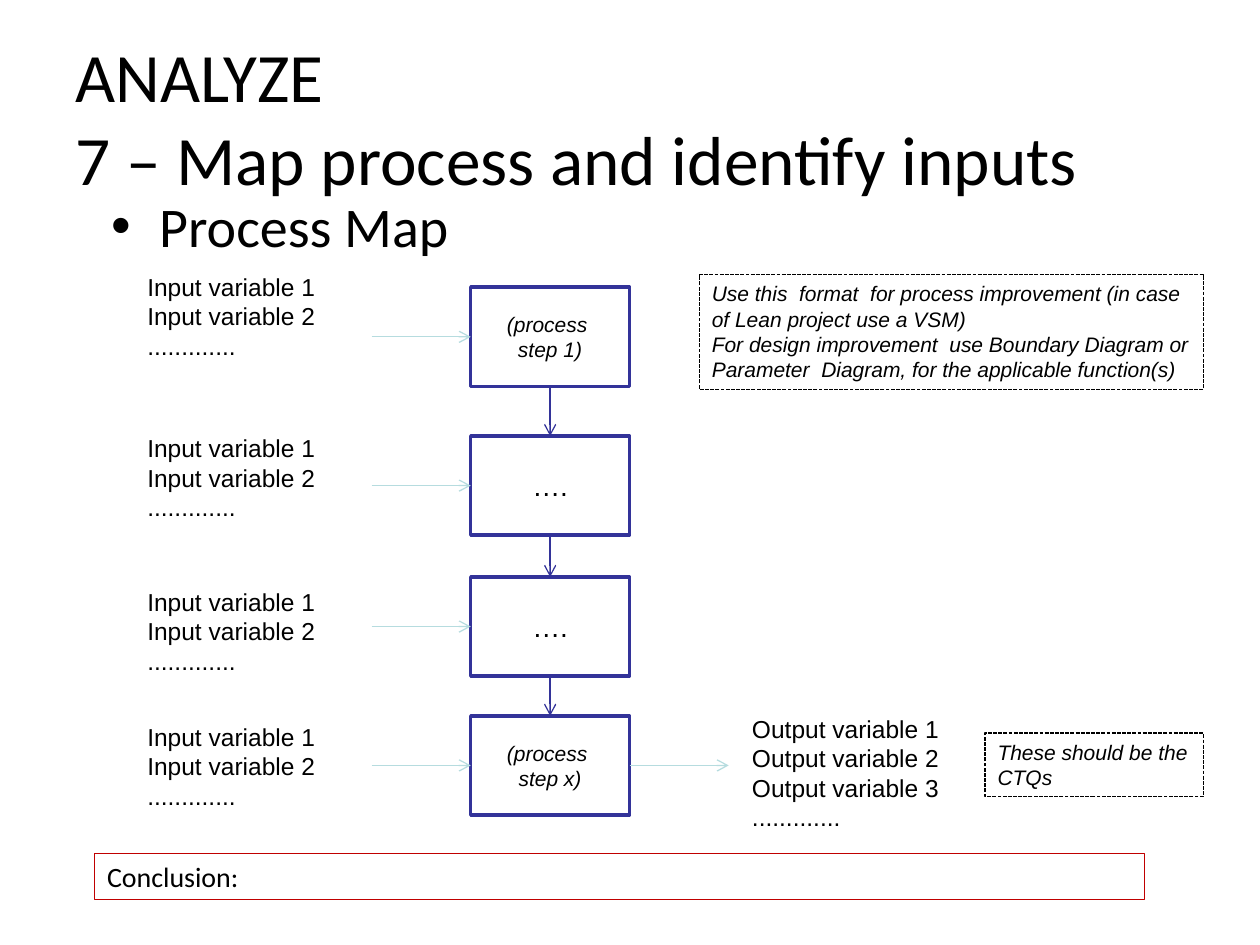
from pptx import Presentation
from pptx.dml.color import RGBColor
from pptx.enum import dml, shapes, text
from pptx.oxml.ns import qn
from pptx.util import Cm, Pt
from lxml import etree

INK = {"text": "000000", "step": "333399", "flow": "B6DCDF", "end": "C00000"}
ALIGN = text.PP_ALIGN
ANCHOR = text.MSO_ANCHOR
SHAPE = shapes.MSO_SHAPE

STEP_X, STEP_W, STEP_H = 9.49, 3.2, 2
# step text, font size, italic, top of step, top of its inputs
STEPS = [
    ("(process \nstep 1)", 12, True, 5.79, 5.36),
    ("….", 16, False, 8.79, 8.61),
    ("….", 16, False, 11.63, 11.71),
    ("(process \nstep x)", 12, True, 14.43, 14.43),
]
INPUTS = "Input variable 1\nInput variable 2\n............."
OUTPUTS = "Output variable 1\nOutput variable 2\nOutput variable 3\n............."
NOTE = ("Use this  format  for process improvement (in case of Lean project use a VSM)\n"
        "For design improvement  use Boundary Diagram or Parameter  Diagram, "
        "for the applicable function(s)")


def color(name):
    return RGBColor.from_string(INK[name])


def place(shape, left, top, width, height):
    shape.left, shape.top = Cm(left), Cm(top)
    shape.width, shape.height = Cm(width), Cm(height)


def write(shape, words, size=14, font="Arial", italic=False,
          align=ALIGN.LEFT, anchor=ANCHOR.TOP):
    frame = shape.text_frame
    frame.word_wrap = True
    frame.auto_size = text.MSO_AUTO_SIZE.NONE
    frame.vertical_anchor = anchor
    frame.text = words
    for para in frame.paragraphs:
        para.alignment = align
        for run in para.runs:
            run.font.size = Pt(size)
            run.font.name = font
            run.font.italic = italic
            run.font.color.rgb = color("text")


def label(slide, words, *box, **style):
    shape = slide.shapes.add_textbox(*map(Cm, box))
    write(shape, words, **style)
    return shape


def frame(slide, words, *box, kind=SHAPE.RECTANGLE, line="text",
          width=0.75, dash=None, **style):
    """Draw an outlined, unfilled shape with text."""
    shape = slide.shapes.add_shape(kind, *map(Cm, box))
    shape.shadow.inherit = False
    shape.fill.background()
    shape.line.color.rgb = color(line)
    shape.line.width = Pt(width)
    if dash:
        shape.line.dash_style = dash
    write(shape, words, **style)


def arrow(slide, x1, y1, x2, y2, line):
    link = slide.shapes.add_connector(
        shapes.MSO_CONNECTOR.STRAIGHT, Cm(x1), Cm(y1), Cm(x2), Cm(y2))
    link.line.color.rgb = color(line)
    link.line.width = Pt(0.75)
    props = link._element.spPr
    etree.SubElement(props.find(qn("a:ln")), qn("a:tailEnd"), type="arrow")
    etree.SubElement(props, qn("a:effectLst"))


def bullet(shape, indent):
    para = shape.text_frame.paragraphs[0]
    para.space_before = Pt(6.4)
    props = para._p.get_or_add_pPr()
    props.set("marL", str(Cm(indent)))
    props.set("indent", str(-Cm(indent)))
    etree.SubElement(props, qn("a:buFont"), typeface="Arial")
    etree.SubElement(props, qn("a:buChar"), char="•")


def process(slide):
    mid = STEP_X + STEP_W / 2
    for words, size, italic, top, _ in STEPS:
        frame(slide, words, STEP_X, top, STEP_W, STEP_H,
              kind=SHAPE.FLOWCHART_PROCESS, line="step", width=2, size=size,
              italic=italic, align=ALIGN.CENTER, anchor=ANCHOR.MIDDLE)
    tops = [step[3] for step in STEPS]
    for top, below in zip(tops, tops[1:]):
        arrow(slide, mid, top + STEP_H, mid, below, "step")
    for *_, top, side in STEPS:
        row = top + STEP_H / 2
        arrow(slide, STEP_X - 2, row, STEP_X, row, "flow")
        label(slide, INPUTS, 2.72, side, 4.1, 2.06)
    end = STEP_X + STEP_W
    arrow(slide, end, row, end + 2, row, "flow")
    label(slide, OUTPUTS, 14.91, 14.27, 4.6, 2.64)


def main():
    deck = Presentation()
    deck.slide_width, deck.slide_height = Cm(25.4), Cm(19.05)
    slide = deck.slides.add_slide(deck.slide_layouts[5])
    title = slide.shapes.title
    place(title, 1.27, 0.76, 22.86, 3.18)
    write(title, "ANALYZE\n7 – Map process and identify inputs", size=39.6,
          font="Calibri", anchor=ANCHOR.MIDDLE)
    head = label(slide, "Process Map", 2, 3.73, 22, 1.6, size=32, font="Calibri")
    bullet(head, 0.96)
    frame(slide, "Conclusion:", 1.91, 17.2, 21.17, 0.94, line="end",
          size=16, font="Calibri")
    process(slide)
    hint = dict(dash=dml.MSO_LINE.SQUARE_DOT, size=12, italic=True)
    frame(slide, NOTE, 14.1, 5.54, 10.16, 2.31, **hint)
    frame(slide, "These should be the CTQs", 19.86, 14.78, 4.4, 1.28, **hint)
    deck.save("out.pptx")


if __name__ == "__main__":
    main()
